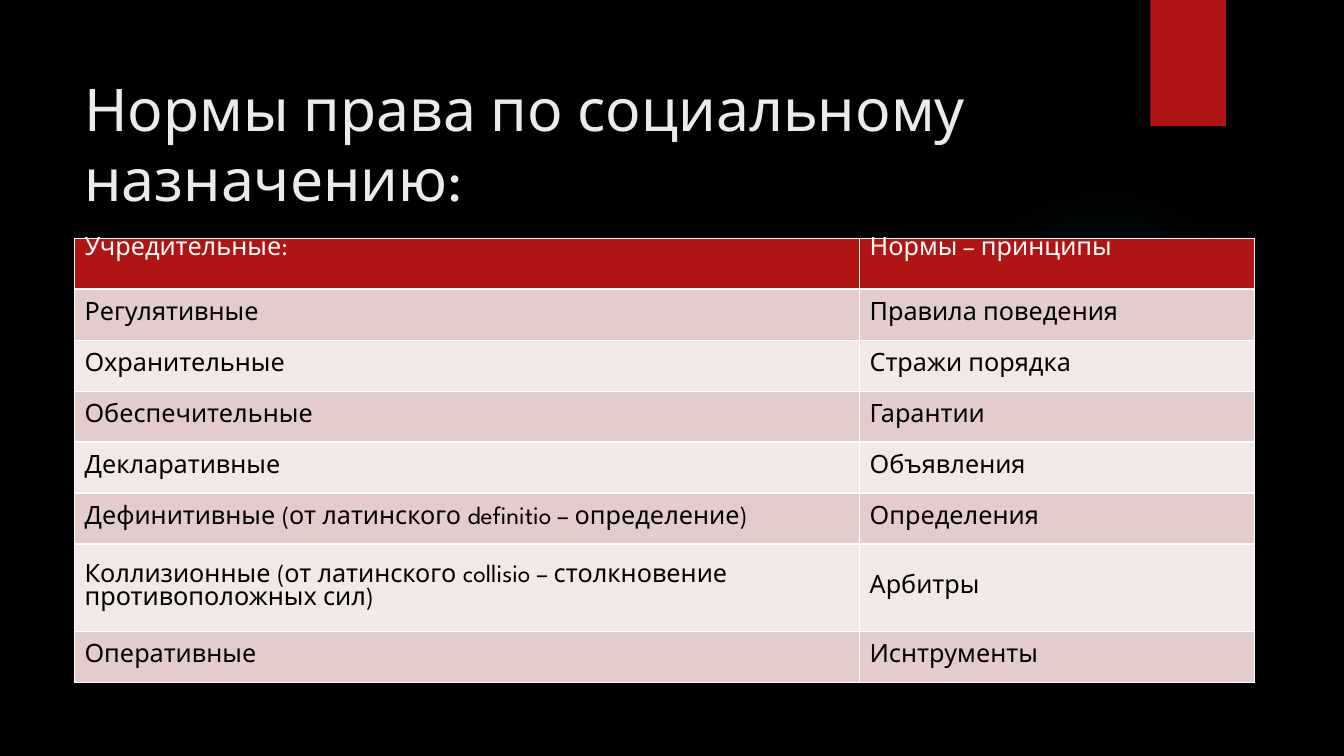
from lxml import etree
from pptx import Presentation
from pptx.dml.color import RGBColor
from pptx.enum.shapes import MSO_SHAPE as SHAPE
from pptx.enum.text import MSO_ANCHOR as ANCHOR
from pptx.oxml import parse_xml
from pptx.oxml.ns import nsdecls, qn
from pptx.util import Pt

TITLE = "Нормы права по социальному назначению:"
NORMS = [
    ("Учредительные:", "Нормы – принципы"),
    ("Регулятивные", "Правила поведения"),
    ("Охранительные", "Стражи порядка"),
    ("Обеспечительные", "Гарантии"),
    ("Декларативные", "Объявления"),
    ("Дефинитивные (от латинского definitio – определение)", "Определения"),
    ("Коллизионные (от латинского collisio – столкновение противоположных сил)", "Арбитры"),
    ("Оперативные", "Иснтрументы"),
]
COLORS = {"back": "000000", "red": "B01513", "title": "EBEBEB", "white": "FFFFFF",
          "black": "000000", "odd": "E4CCCC", "even": "F2E8E7", "glow": "50B9C1"}
FONT = "League Spartan"
COL_WIDTHS = (560.8, 282)
ROW_HEIGHT, TALL_HEIGHT, TALL_ROW = 36.4, 62.4, 6
GLOW_STOPS = [(0, 7), (36, 6), (69, 0)]


def rgb(name):
    return RGBColor.from_string(COLORS[name])


def write(tf, text, size, color):
    tf.word_wrap = True
    r = tf.paragraphs[0].add_run()
    r.text = text
    r.font.size = Pt(size)
    r.font.name = FONT
    r.font.color.rgb = rgb(color)


def add_plain(s, kind, x, y, w, h, color):
    sp = s.shapes.add_shape(kind, Pt(x), Pt(y), Pt(w), Pt(h))
    sp.shadow.inherit = False
    sp.fill.solid()
    sp.fill.fore_color.rgb = rgb(color)
    sp.line.fill.background()
    return sp


def add_glow(s):
    sp = add_plain(s, SHAPE.OVAL, 677.5, 131.8, 221.8, 221.8, "glow")
    stops = "".join(
        f'<a:gs pos="{pos * 1000}"><a:srgbClr val="{COLORS["glow"]}">'
        f'<a:alpha val="{alpha * 1000}"/></a:srgbClr></a:gs>' for pos, alpha in GLOW_STOPS)
    grad = parse_xml(
        f'<a:gradFill {nsdecls("a")}><a:gsLst>{stops}</a:gsLst><a:path path="circle">'
        '<a:fillToRect l="50000" t="50000" r="50000" b="50000"/></a:path></a:gradFill>')
    solid = sp.fill._xPr.find(qn("a:solidFill"))
    solid.getparent().replace(solid, grad)


def set_borders(cell, widths):
    tc_pr = cell._tc.get_or_add_tcPr()
    for i, (side, width) in enumerate(widths.items()):
        ln = etree.Element(qn(f"a:ln{side}"), w=str(Pt(width)))
        fill = etree.SubElement(ln, qn("a:solidFill"))
        etree.SubElement(fill, qn("a:srgbClr"), val=COLORS["white"])
        tc_pr.insert(i, ln)


def add_norms(s):
    heights = [TALL_HEIGHT if i == TALL_ROW else ROW_HEIGHT for i in range(len(NORMS))]
    table = s.shapes.add_table(len(NORMS), len(COL_WIDTHS), Pt(53.2), Pt(170.2),
                               Pt(sum(COL_WIDTHS)), Pt(sum(heights))).table
    for col, width in zip(table.columns, COL_WIDTHS):
        col.width = Pt(width)
    for i, (texts, height) in enumerate(zip(NORMS, heights)):
        table.rows[i].height = Pt(height)
        head = i == 0
        for j, text in enumerate(texts):
            cell = table.cell(i, j)
            cell.margin_top = cell.margin_bottom = 0
            cell.vertical_anchor = ANCHOR.TOP if head else ANCHOR.MIDDLE
            cell.fill.solid()
            cell.fill.fore_color.rgb = rgb("red" if head else "odd" if i % 2 else "even")
            set_borders(cell, {"L": 1, "R": 1, "T": 1.5 if i == 1 else 1,
                               "B": 1.5 if head else 1})
            write(cell.text_frame, text, 18, "white" if head else "black")


def main():
    prs = Presentation()
    prs.slide_width, prs.slide_height = Pt(960), Pt(540)
    s = prs.slides.add_slide(prs.slide_layouts[6])
    s.background.fill.solid()
    s.background.fill.fore_color.rgb = rgb("back")
    add_glow(s)
    add_plain(s, SHAPE.RECTANGLE, 821.8, 0, 54, 90, "red")
    title = s.shapes.add_textbox(Pt(53.2), Pt(48.2), Pt(676.8), Pt(55.4))
    write(title.text_frame, TITLE, 42, "title")
    add_norms(s)
    prs.save("out.pptx")


if __name__ == "__main__":
    main()
